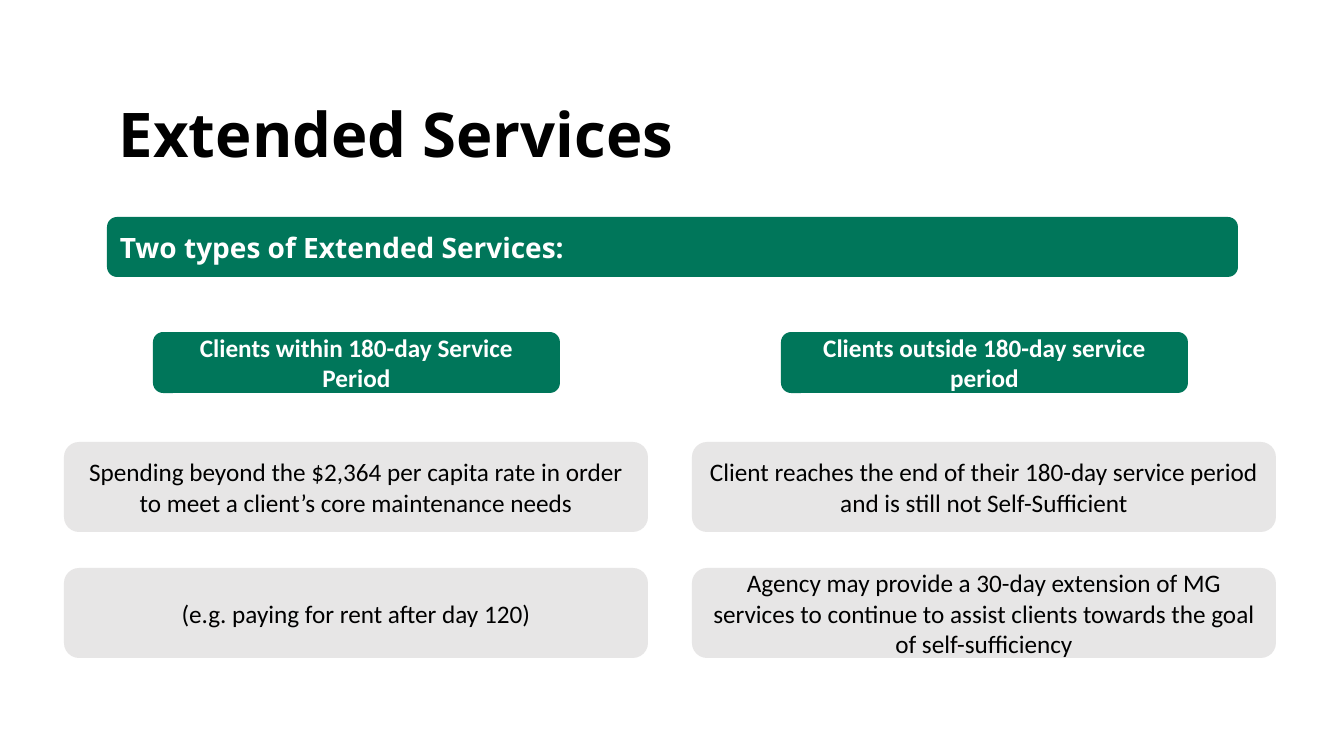
from pptx import Presentation
from pptx.dml.color import RGBColor as RGB
from pptx.enum.shapes import MSO_SHAPE as SHAPE
from pptx.enum.text import MSO_ANCHOR as ANCHOR, PP_ALIGN as ALIGN
from pptx.util import Pt

SCALE = 12192000 / 1344  # EMU per px
COLORS = {"green": "00765A", "gray": "E7E6E6", "white": "FFFFFF", "black": "000000"}


def px(*sizes):
    return [round(size * SCALE) for size in sizes]


def write(shape, text, size, font, color, bold, align):
    frame = shape.text_frame
    frame.word_wrap = True
    frame.vertical_anchor = ANCHOR.MIDDLE
    para = frame.paragraphs[0]
    para.alignment = align
    run = para.add_run()
    run.text = text
    run.font.size = Pt(size)
    run.font.name = font
    run.font.bold = bold
    run.font.color.rgb = RGB.from_string(COLORS[color])


deck = Presentation()
deck.slide_width, deck.slide_height = px(1344, 756)
slide = deck.slides.add_slide(deck.slide_layouts[6])

# Title
title = slide.shapes.add_textbox(*px(109, 90, 1066, 85))
write(title, "Extended Services", 44, "Open Sans", "black", True, ALIGN.LEFT)

# Banner, then a heading and two details for each column
bars = [(107, 217, 1131, 60, "green", "Two types of Extended Services:",
         20, "Open Sans", "white", True, ALIGN.LEFT)]
columns = [
    (64, 153, "Clients within 180-day Service Period",
     ["Spending beyond the $2,364 per capita rate in order to meet a client’s core maintenance needs",
      "(e.g. paying for rent after day 120)"]),
    (692, 781, "Clients outside 180-day service period",
     ["Client reaches the end of their 180-day service period and is still not Self-Sufficient",
      "Agency may provide a 30-day extension of MG services to continue to assist clients "
      "towards the goal of self-sufficiency"]),
]
for left, inset, head, details in columns:
    bars.append((inset, 332, 407, 61, "green", head,
                 18, "Calibri", "white", True, ALIGN.CENTER))
    for row, detail in enumerate(details):
        bars.append((left, 442 + 126 * row, 584, 90, "gray", detail,
                     18, "Calibri", "black", False, ALIGN.CENTER))

# Rounded bars
for left, top, width, height, fill, *words in bars:
    bar = slide.shapes.add_shape(SHAPE.ROUNDED_RECTANGLE, *px(left, top, width, height))
    bar.shadow.inherit = False
    bar.fill.solid()
    bar.fill.fore_color.rgb = RGB.from_string(COLORS[fill])
    bar.line.fill.background()
    write(bar, *words)

deck.save("out.pptx")
